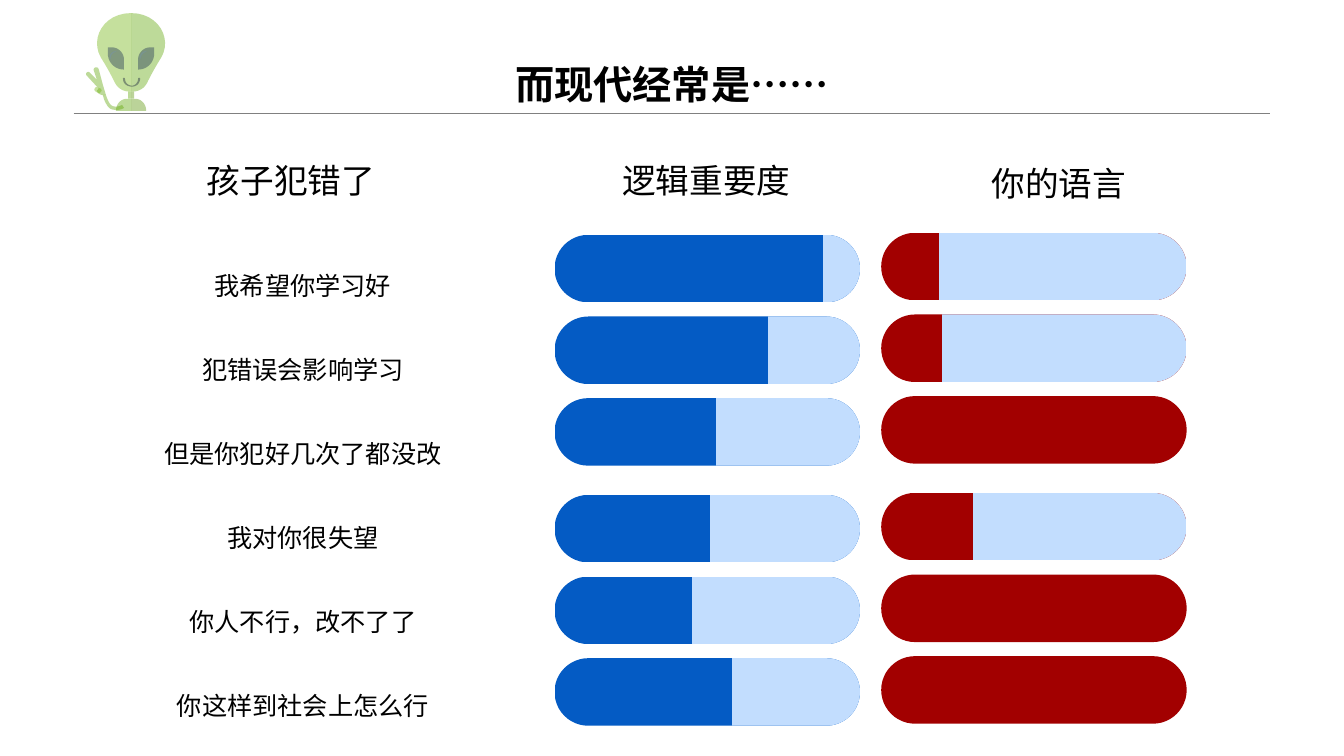
import copy
import pptx
import pptx.dml.color
import pptx.enum.shapes
import pptx.enum.text
import pptx.oxml.ns
import pptx.util
from lxml import etree

RGB = pptx.dml.color.RGBColor
BLACK, GRAY = RGB(0, 0, 0), RGB(128, 128, 128)
BLUE, RED, PALE = RGB(4, 91, 196), RGB(162, 0, 0), RGB(194, 221, 254)
LIME, GREEN, MOSS = RGB(110, 178, 11), RGB(92, 163, 0), RGB(86, 147, 0)
NAVY, INK, GLINT = RGB(26, 44, 81), RGB(18, 26, 53), RGB(116, 146, 181)

TITLE = "而现代经常是……"
STATEMENTS = ["我希望你学习好", "犯错误会影响学习", "但是你犯好几次了都没改",
              "我对你很失望", "你人不行，改不了了", "你这样到社会上怎么行"]
HEADINGS = [  # text, left, top, width
    ("孩子犯错了", 1.82, 1.54, 2.13),
    ("逻辑重要度", 5.94, 1.54, 2.13),
    ("你的语言", 8.79, 1.57, 3.42),
]
METERS = [  # left, top, colour, filled percent of each row
    (5.5, 2.33, BLUE, [88, 70, 53, 51, 45, 58]),
    (8.74, 2.31, RED, [19, 20, 100, 30, 100, 100]),
]
METER_WIDTH, METER_HEIGHT, ROW_STEP = 3.03, 0.67, 0.81
GROUP_ROWS, GROUP_GAP = 3, 0.15
MARGIN, CONTENT_WIDTH, RULE_TOP = 0.73, 11.87, 1.12

# Alien outlines in inches: a start, then line ends (x, y) or curves (six numbers).
AXIS = 1.3
HEAD = [(1.3, 0.13), (1.03, 0.13, 0.89, 0.38, 1, 0.57),
        (1.05, 0.65, 1.09, 0.72, 1.13, 0.8), (1.16, 0.87, 1.21, 0.91, 1.3, 0.91)]
NECK = [(1.3, 0.91), (1.27, 0.91), (1.27, 0.98), (1.3, 0.98)]
SHOULDER = [(1.3, 0.98), (1.26, 0.98), (1.2, 0.98, 1.15, 1.03, 1.15, 1.1), (1.3, 1.1)]
EYE = [(1.23, 0.69), (1.14, 0.69, 1.07, 0.62, 1.07, 0.53), (1.07, 0.47),
       (1.11, 0.47), (1.18, 0.47, 1.23, 0.53, 1.23, 0.59)]
MOUTH = [(1.22, 0.78), (1.22, 0.77, 1.24, 0.77, 1.24, 0.78),
         (1.24, 0.82, 1.27, 0.85, 1.31, 0.85), (1.34, 0.85, 1.37, 0.82, 1.37, 0.78),
         (1.37, 0.77, 1.39, 0.77, 1.39, 0.78), (1.39, 0.83, 1.35, 0.86, 1.31, 0.86),
         (1.26, 0.86, 1.22, 0.83, 1.22, 0.78)]
HAND = [(1.02, 0.84), (0.98, 0.69), (0.97, 0.65, 0.92, 0.67, 0.93, 0.7), (0.96, 0.79),
        (0.89, 0.72), (0.87, 0.7, 0.84, 0.73, 0.86, 0.75), (0.98, 0.88), (0.96, 0.9),
        (0.97, 0.92), (0.99, 0.94, 1.02, 0.95, 1.05, 0.94)]
THUMB = [(1, 0.91), (1, 0.92, 0.98, 0.93, 0.97, 0.92), (0.95, 0.91),
         (0.94, 0.9, 0.93, 0.89, 0.94, 0.88), (0.95, 0.86, 0.96, 0.86, 0.97, 0.87),
         (1, 0.88), (1.01, 0.89, 1.01, 0.91, 1, 0.91)]
ARM = [(1.15, 1.09), (1.11, 1.09, 1.08, 1.08, 1.06, 1.04),
       (1.03, 1, 1.02, 0.94, 1.02, 0.94), (1.05, 0.94),
       (1.05, 0.94, 1.06, 0.98, 1.09, 1.03), (1.12, 1.07, 1.18, 1.06, 1.21, 1.04),
       (1.23, 1.07), (1.2, 1.09, 1.17, 1.09, 1.15, 1.09)]
EYE_GLINT = [(1.1, 0.59), (1.07, 0.55, 1.11, 0.5, 1.16, 0.51),
             (1.12, 0.52, 1.09, 0.55, 1.1, 0.59)]


def mirrored(outline):
    return [tuple(round(2 * AXIS - value, 2) if index % 2 == 0 else value
                  for index, value in enumerate(segment)) for segment in outline]


def shifted(outline, distance):
    return [tuple(value + distance if index % 2 == 0 else value
                  for index, value in enumerate(segment)) for segment in outline]


ALIEN = [(NECK, GREEN), (mirrored(NECK), MOSS), (HEAD, LIME), (mirrored(HEAD), GREEN),
         (SHOULDER, GREEN), (mirrored(SHOULDER), MOSS), (HAND, GREEN),
         (EYE, NAVY), (mirrored(EYE), NAVY), (MOUTH, INK), (THUMB, LIME), (ARM, GREEN),
         (EYE_GLINT, GLINT), (shifted(EYE_GLINT, 0.3), GLINT)]

inches = pptx.util.Inches
qn = pptx.oxml.ns.qn


def outline_points(outline, steps=12):
    """Flatten lines and cubic curves into points in EMU."""
    points = [outline[0]]
    for segment in outline[1:]:
        if len(segment) == 2:
            points.append(segment)
            continue
        corners = [points[-1], segment[:2], segment[2:4], segment[4:]]
        for step in range(1, steps + 1):
            t = step / steps
            weights = [(1 - t) ** 3, 3 * t * (1 - t) ** 2, 3 * t * t * (1 - t), t ** 3]
            points.append(tuple(sum(weight * corner[axis] for weight, corner
                                    in zip(weights, corners)) for axis in (0, 1)))
    return [(inches(x), inches(y)) for x, y in points]


def add_alien_part(slide, outline, color):
    points = outline_points(outline)
    builder = slide.shapes.build_freeform(*points[0], scale=1.0)
    builder.add_line_segments(points[1:], close=True)
    shape = builder.convert_to_shape()
    shape.shadow.inherit = False
    shape.line.fill.background()
    shape.fill.solid()
    shape.fill.fore_color.rgb = color
    color_element = shape._element.spPr.find(qn("a:solidFill"))[0]
    etree.SubElement(color_element, qn("a:alpha"), val="40000")


def add_meter(slide, left, top, color, percent):
    shape = slide.shapes.add_shape(
        pptx.enum.shapes.MSO_SHAPE.ROUNDED_RECTANGLE,
        inches(left), inches(top), inches(METER_WIDTH), inches(METER_HEIGHT))
    shape.adjustments[0] = 0.5
    shape.shadow.inherit = False
    shape.line.fill.background()
    if percent == 100:
        shape.fill.solid()
        shape.fill.fore_color.rgb = color
        return
    shape.fill.gradient()
    shape.fill.gradient_angle = 0
    stop_list = shape._element.spPr.find(".//" + qn("a:gsLst"))
    stop_list.extend(copy.deepcopy(list(stop_list)))
    stops = [(0, color), (percent, color), (percent, PALE), (100, PALE)]
    for stop, (position, stop_color) in zip(shape.fill.gradient_stops, stops):
        stop.position = position / 100
        stop.color.rgb = stop_color


def format_text(text_frame, size, bold=False, line_spacing=None):
    text_frame.word_wrap = True
    for paragraph in text_frame.paragraphs:
        paragraph.alignment = pptx.enum.text.PP_ALIGN.CENTER
        paragraph.line_spacing = line_spacing
        for run in paragraph.runs:
            run.font.name = "Arial"
            run.font.size = pptx.util.Pt(size)
            run.font.bold = bold
            run.font.color.rgb = BLACK


def add_text(slide, text, left, top, width, height, size, line_spacing=None):
    box = slide.shapes.add_textbox(*map(inches, (left, top, width, height)))
    box.text_frame.text = text
    format_text(box.text_frame, size, line_spacing=line_spacing)


def main():
    presentation = pptx.Presentation()
    presentation.slide_width, presentation.slide_height = inches(13.33), inches(7.5)
    slide = presentation.slides.add_slide(presentation.slide_layouts[5])

    rule = slide.shapes.add_connector(
        pptx.enum.shapes.MSO_CONNECTOR.STRAIGHT, inches(MARGIN), inches(RULE_TOP),
        inches(MARGIN + CONTENT_WIDTH), inches(RULE_TOP))
    rule.line.color.rgb = GRAY
    rule.line.width = pptx.util.Pt(0.25)
    etree.SubElement(rule._element.spPr, qn("a:effectLst"))
    for outline, color in ALIEN:
        add_alien_part(slide, outline, color)

    title = slide.shapes.title
    title.left, title.top = inches(MARGIN), 0
    title.width, title.height = inches(CONTENT_WIDTH), inches(RULE_TOP)
    title.text_frame.text = TITLE
    title.text_frame.vertical_anchor = pptx.enum.text.MSO_ANCHOR.BOTTOM
    format_text(title.text_frame, 28, bold=True, line_spacing=0.9)

    add_text(slide, "\n".join(STATEMENTS), MARGIN, 2.1, 4.55, 5.07, 18, pptx.util.Pt(60))
    for left, top, color, percents in METERS:
        for row, percent in enumerate(percents):
            row_top = top + row * ROW_STEP + row // GROUP_ROWS * GROUP_GAP
            add_meter(slide, left, row_top, color, percent)
    for text, left, top, width in HEADINGS:
        add_text(slide, text, left, top, width, 0.5, 24)
    presentation.save("out.pptx")


if __name__ == "__main__":
    main()
